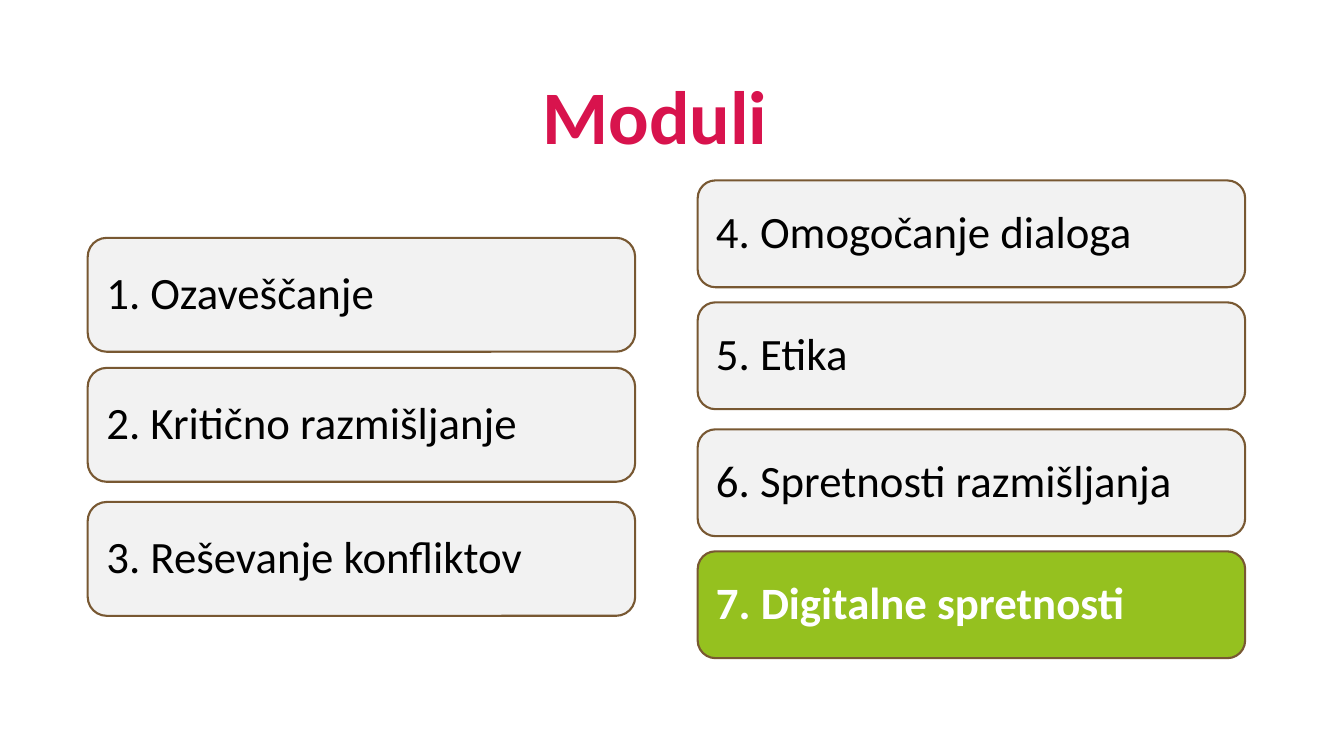
from pptx import Presentation
from pptx.dml.color import RGBColor
from pptx.enum.shapes import MSO_SHAPE
from pptx.enum.text import MSO_ANCHOR, PP_ALIGN
from pptx.util import Inches, Pt

COLORS = {
    "title": "D8134D",
    "card": "F2F2F2",
    "current": "95C11F",
    "border": "785832",
    "text": "000000",
    "current_text": "FFFFFF",
}
CARD_WIDTH = 5.43
# Each column: left edge, card height, then (top, module name) pairs
COLUMNS = [
    (0.87, 1.13, [
        (2.36, "Ozaveščanje"),
        (3.65, "Kritično razmišljanje"),
        (4.98, "Reševanje konfliktov"),
    ]),
    (6.92, 1.06, [
        (1.79, "Omogočanje dialoga"),
        (3.0, "Etika"),
        (4.26, "Spretnosti razmišljanja"),
        (5.47, "Digitalne spretnosti"),
    ]),
]
CURRENT_MODULE = 7


def color(name):
    return RGBColor.from_string(COLORS[name])


def write_text(frame, text, *, size, ink, bold=False, align=PP_ALIGN.LEFT,
               anchor=MSO_ANCHOR.MIDDLE):
    frame.word_wrap = True
    frame.vertical_anchor = anchor
    paragraph = frame.paragraphs[0]
    paragraph.alignment = align
    paragraph.line_spacing = 0.9
    run = paragraph.add_run()
    run.text = text
    run.font.name = "Calibri"
    run.font.size = Pt(size)
    run.font.bold = bold
    run.font.color.rgb = color(ink)


def add_heading(slide, text):
    heading = slide.shapes.title
    heading.left, heading.top = Inches(0.01), Inches(-0.3)
    heading.width, heading.height = Inches(12.97), Inches(1.95)
    write_text(heading.text_frame, text, size=54, ink="title", bold=True,
               align=PP_ALIGN.CENTER, anchor=MSO_ANCHOR.BOTTOM)


def add_module(slide, left, top, height, label, current):
    card = slide.shapes.add_shape(
        MSO_SHAPE.ROUNDED_RECTANGLE, Inches(left), Inches(top),
        Inches(CARD_WIDTH), Inches(height))
    card.shadow.inherit = False
    card.fill.solid()
    card.fill.fore_color.rgb = color("current" if current else "card")
    card.line.color.rgb = color("border")
    card.line.width = Pt(1.5)
    frame = card.text_frame
    # The rounded corners already inset the text by about 0.05 in
    frame.margin_left = frame.margin_right = Inches(0.13)
    write_text(frame, label, size=32, bold=current,
               ink="current_text" if current else "text")


def main():
    deck = Presentation()
    deck.slide_width, deck.slide_height = Inches(13.33), Inches(7.5)
    slide = deck.slides.add_slide(deck.slide_layouts[5])
    add_heading(slide, "Moduli")
    number = 0
    for left, height, modules in COLUMNS:
        for top, name in modules:
            number += 1
            add_module(slide, left, top, height, f"{number}. {name}",
                       current=number == CURRENT_MODULE)
    deck.save("out.pptx")


if __name__ == "__main__":
    main()
